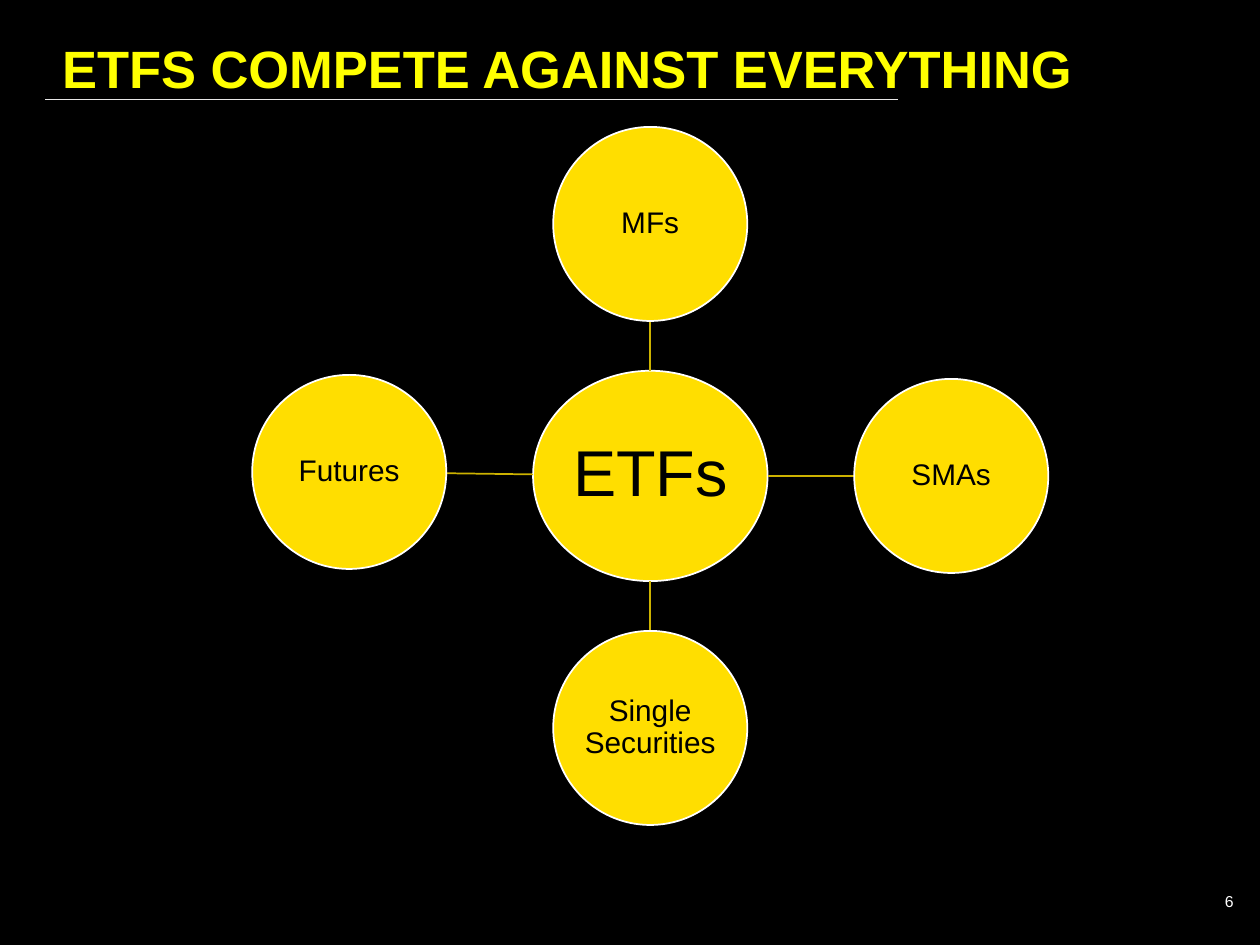
import math

import pptx
import pptx.dml.color
import pptx.enum.shapes
import pptx.enum.text
import pptx.oxml.ns
import pptx.util
from lxml import etree

Pt = pptx.util.Pt
ALIGN = pptx.enum.text.PP_ALIGN
ANCHOR = pptx.enum.text.MSO_ANCHOR

# Content
TITLE = "ETFS COMPETE AGAINST EVERYTHING"
PAGE_NUMBER = "6"
HUB = "ETFs"
# Each competitor with the offset of its centre from the hub's centre
COMPETITORS = [
    ("MFs", 0, -144),
    ("SMAs", 172, 0),
    ("Single Securities", 0, 144),
    ("Futures", -172, -2.3),
]

# Geometry, in points
HUB_X, HUB_Y = 371.6, 272
HUB_WIDTH, HUB_HEIGHT = 134, 120.2
COMPETITOR_SIZE = 110.9

# Colours
BLACK, WHITE = "000000", "FFFFFF"
TITLE_YELLOW, CIRCLE_YELLOW, LINK_GOLD, RULE_GREY = "FFFF00", "FFDE00", "CCB200", "E7E6E6"


def color(value):
    return pptx.dml.color.RGBColor.from_string(value)


def write(shape, text, size, ink, align=ALIGN.LEFT, anchor=ANCHOR.MIDDLE,
          bold=False, spacing=1.0, insets=(7.2, 3.6)):
    frame = shape.text_frame
    frame.word_wrap = True
    frame.vertical_anchor = anchor
    frame.margin_left = frame.margin_right = Pt(insets[0])
    frame.margin_top = frame.margin_bottom = Pt(insets[1])
    paragraph = frame.paragraphs[0]
    paragraph.alignment = align
    paragraph.line_spacing = spacing
    run = paragraph.add_run()
    run.text = text
    run.font.name = "Arial"
    run.font.size = Pt(size)
    run.font.bold = bold
    run.font.color.rgb = color(ink)


def add_text(left, top, width, height, text, **style):
    box = slide.shapes.add_textbox(Pt(left), Pt(top), Pt(width), Pt(height))
    write(box, text, **style)


def add_line(x1, y1, x2, y2, ink, width):
    line = slide.shapes.add_connector(
        pptx.enum.shapes.MSO_CONNECTOR.STRAIGHT, Pt(x1), Pt(y1), Pt(x2), Pt(y2))
    line.line.color.rgb = color(ink)
    line.line.width = Pt(width)
    etree.SubElement(line._element.spPr, pptx.oxml.ns.qn("a:effectLst"))


def add_circle(x, y, width, height, text, size, inset):
    circle = slide.shapes.add_shape(
        pptx.enum.shapes.MSO_SHAPE.OVAL,
        Pt(x - width / 2), Pt(y - height / 2), Pt(width), Pt(height))
    circle.shadow.inherit = False
    circle.fill.solid()
    circle.fill.fore_color.rgb = color(CIRCLE_YELLOW)
    circle.line.color.rgb = color(WHITE)
    circle.line.width = Pt(1)
    write(circle, text, size=size, ink=BLACK, align=ALIGN.CENTER,
          spacing=0.9, insets=(inset, inset))


presentation = pptx.Presentation()
presentation.slide_width, presentation.slide_height = Pt(720), Pt(540)
slide = presentation.slides.add_slide(presentation.slide_layouts[6])
slide.background.fill.solid()
slide.background.fill.fore_color.rgb = color(BLACK)

# Title, rule and page number
add_line(25.9, 56.9, 512.9, 56.9, RULE_GREY, 0.5)
add_text(28.4, -12.2, 629, 72.7, TITLE, size=30, ink=TITLE_YELLOW, bold=True,
         anchor=ANCHOR.BOTTOM, spacing=0.9)
add_text(550, 500.4, 162, 28.8, PAGE_NUMBER, size=9, ink=WHITE, align=ALIGN.RIGHT)

# Hub, and competitors linked to it from edge to edge
add_circle(HUB_X, HUB_Y, HUB_WIDTH, HUB_HEIGHT, HUB, 37, 2)
for name, dx, dy in COMPETITORS:
    distance = math.hypot(dx, dy)
    start = 1 / math.hypot(dx / (HUB_WIDTH / 2), dy / (HUB_HEIGHT / 2))
    end = 1 - COMPETITOR_SIZE / 2 / distance
    add_line(HUB_X + dx * start, HUB_Y + dy * start,
             HUB_X + dx * end, HUB_Y + dy * end, LINK_GOLD, 1)
    add_circle(HUB_X + dx, HUB_Y + dy, COMPETITOR_SIZE, COMPETITOR_SIZE, name, 17, 0.8)

presentation.save("out.pptx")
